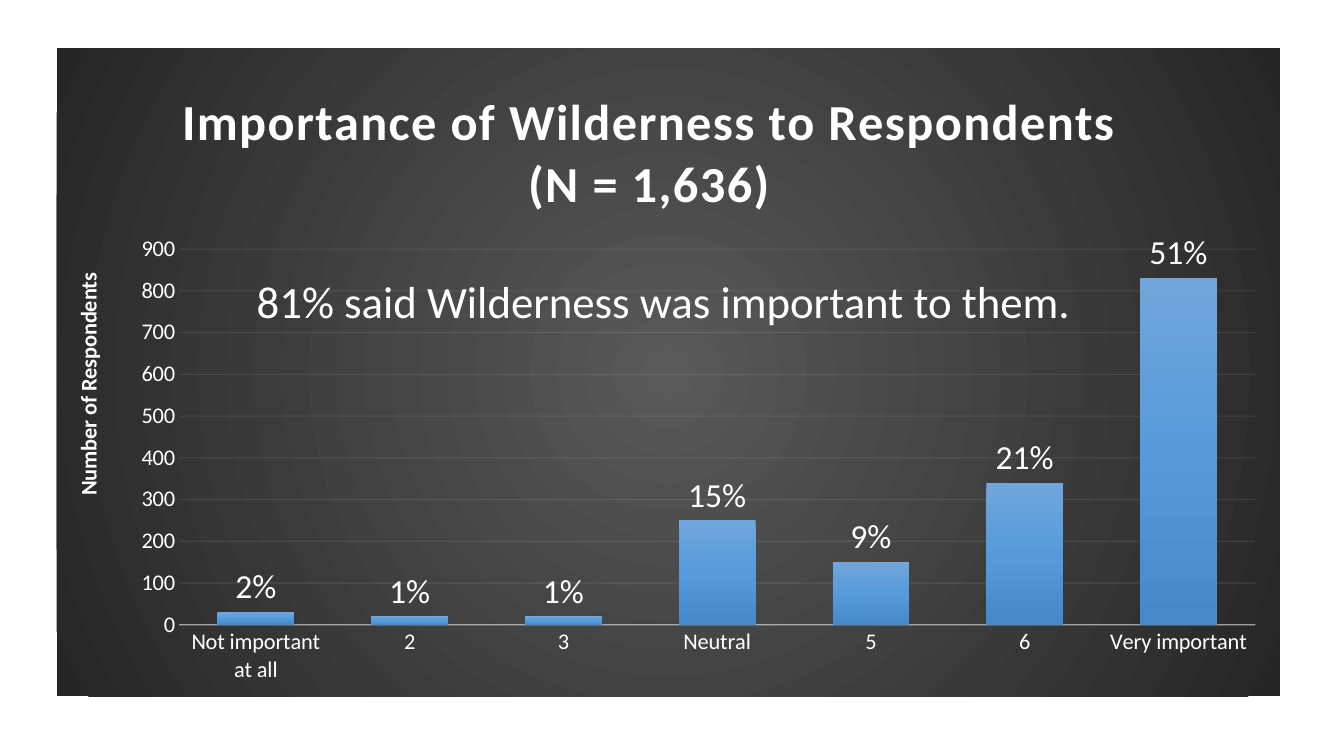
from lxml.etree import SubElement
from pptx import Presentation
from pptx.chart.data import CategoryChartData
from pptx.dml.color import RGBColor
from pptx.enum.chart import XL_CHART_TYPE as ChartType
from pptx.enum.chart import XL_LABEL_POSITION as LabelPosition
from pptx.enum.chart import XL_TICK_MARK as TickMark
from pptx.enum.text import MSO_AUTO_SIZE as AutoSize
from pptx.enum.text import PP_ALIGN as Align
from pptx.oxml import parse_xml
from pptx.oxml.ns import nsdecls, qn
from pptx.util import Pt

PX = 9525
FONT = "Calibri"
WHITE = "FFFFFF"
RULE = "F2F2F2"
ANSWERS = [
    ("Not important at all", 30, "2%"),
    ("2", 20, "1%"),
    ("3", 20, "1%"),
    ("Neutral", 250, "15%"),
    ("5", 150, "9%"),
    ("6", 340, "21%"),
    ("Very important", 830, "51%"),
]


def px(*lengths):
    """Turn pixel lengths into EMU."""
    return [length * PX for length in lengths]


def rgb(code):
    """Turn a hex string into a colour."""
    return RGBColor.from_string(code)


def style(font, size, bold=False):
    """Set white lettering of the given size."""
    font.name = FONT
    font.size = Pt(size)
    font.bold = bold
    font.color.rgb = rgb(WHITE)


def write(frame, lines, size, bold=False, align=Align.CENTER, spacing=0):
    """Write one paragraph per line, each as a single run."""
    for index, line in enumerate(lines):
        paragraph = frame.add_paragraph() if index else frame.paragraphs[0]
        paragraph.alignment = align
        run = paragraph.add_run()
        run.text = line
        style(run.font, size, bold)
        if spacing:
            run.font._element.set("spc", str(spacing))


def gradient(stops, direction):
    """Build a gradient fill from (percent, colour) stops."""
    marks = "".join(
        f'<a:gs pos="{percent * 1000}"><a:srgbClr val="{code}"/></a:gs>'
        for percent, code in stops
    )
    return parse_xml(
        f'<a:gradFill {nsdecls("a")} rotWithShape="1">'
        f"<a:gsLst>{marks}</a:gsLst>{direction}</a:gradFill>"
    )


def rule_line(line, width, opacity):
    """Style an axis line or gridline as a translucent rule."""
    line.width = Pt(width)
    line.color.rgb = rgb(RULE)
    color = line._get_or_add_ln().find(".//" + qn("a:srgbClr"))
    SubElement(color, qn("a:alpha"), val=str(opacity * 1000))


def place(part, inner=False, **fractions):
    """Fix the position of a chart part as fractions of the chart."""
    layout = part.find(qn("c:layout"))
    if layout is None:
        layout = part.makeelement(qn("c:layout"))
        part.insert(0, layout)
    manual = SubElement(layout, qn("c:manualLayout"))
    if inner:
        SubElement(manual, qn("c:layoutTarget"), val="inner")
    for side in "xy":
        SubElement(manual, qn(f"c:{side}Mode"), val="edge")
    for side, fraction in fractions.items():
        SubElement(manual, qn(f"c:{side}"), val=str(fraction))


def paint_backdrop(chart):
    """Fill the chart area with a dark radial gradient."""
    space = chart._chartSpace
    backdrop = parse_xml(f'<c:spPr {nsdecls("c", "a")}/>')
    center = (
        '<a:path path="circle">'
        '<a:fillToRect l="50000" t="50000" r="50000" b="50000"/></a:path>'
    )
    backdrop.append(gradient([(0, "595959"), (100, "262626")], center))
    SubElement(SubElement(backdrop, qn("a:ln")), qn("a:noFill"))
    space.find(qn("c:chart")).addnext(backdrop)


def style_axes(chart):
    """Style both axes, the gridlines and the value axis title."""
    answers, counts = chart.category_axis, chart.value_axis
    for axis in (answers, counts):
        axis.major_tick_mark = axis.minor_tick_mark = TickMark.NONE
        style(axis.tick_labels.font, 16)
    rule_line(answers.format.line, 1, 54)
    counts.format.line.fill.background()
    counts.minimum_scale, counts.maximum_scale, counts.major_unit = 0, 900, 100
    rule_line(counts.major_gridlines.format.line, 0.75, 10)
    caption = counts.axis_title
    write(caption.text_frame, ["Number of Respondents"], 16, True)
    direction = caption.text_frame._txBody.find(qn("a:bodyPr"))
    direction.set("rot", "-5400000")
    direction.set("vert", "horz")
    place(caption._element, x=0.01, y=0.34)


def style_bars(plot):
    """Style the bars and label each with its share."""
    plot.gap_width, plot.overlap = 100, -24
    plot.vary_by_categories = False
    bars = plot.series[0]
    blues = [(0, "71A6DB"), (50, "559BDB"), (100, "448ACA")]
    down = '<a:lin ang="5400000" scaled="0"/>'
    bars._element.get_or_add_spPr().append(gradient(blues, down))
    for index, (_, _, share) in enumerate(ANSWERS):
        label = bars.points[index].data_label
        write(label.text_frame, [share], 24)
        label.position = LabelPosition.OUTSIDE_END


def add_importance_chart(slide):
    """Add the column chart of answers."""
    data = CategoryChartData()
    data.categories = [answer for answer, _, _ in ANSWERS]
    data.add_series("Series 1", [count for _, count, _ in ANSWERS])
    chart = slide.shapes.add_chart(
        ChartType.COLUMN_CLUSTERED, *px(54, 46, 1165, 617), data
    ).chart
    style(chart.font, 10)
    chart.has_legend = False
    heading = ["Importance of Wilderness to Respondents", "(N = 1,636)"]
    write(chart.chart_title.text_frame, heading, 36, True, spacing=100)
    place(chart.chart_title._element, x=0.1, y=0.06)
    plot_area = chart._chartSpace.find(".//" + qn("c:plotArea"))
    place(plot_area, True, x=0.1, y=0.31, w=0.88, h=0.58)
    paint_backdrop(chart)
    style_axes(chart)
    style_bars(chart.plots[0])


def add_finding(slide):
    """Add the main finding over the chart."""
    frame = slide.shapes.add_textbox(*px(235, 256, 804, 61)).text_frame
    frame.word_wrap = True
    frame.auto_size = AutoSize.SHAPE_TO_FIT_TEXT
    finding = "81% said Wilderness was important to them."
    write(frame, [finding], 32, align=Align.LEFT)


def main():
    """Build and save the slide."""
    deck = Presentation()
    deck.slide_width, deck.slide_height = px(1280, 720)
    slide = deck.slides.add_slide(deck.slide_layouts[6])
    add_importance_chart(slide)
    add_finding(slide)
    deck.save("out.pptx")


if __name__ == "__main__":
    main()
